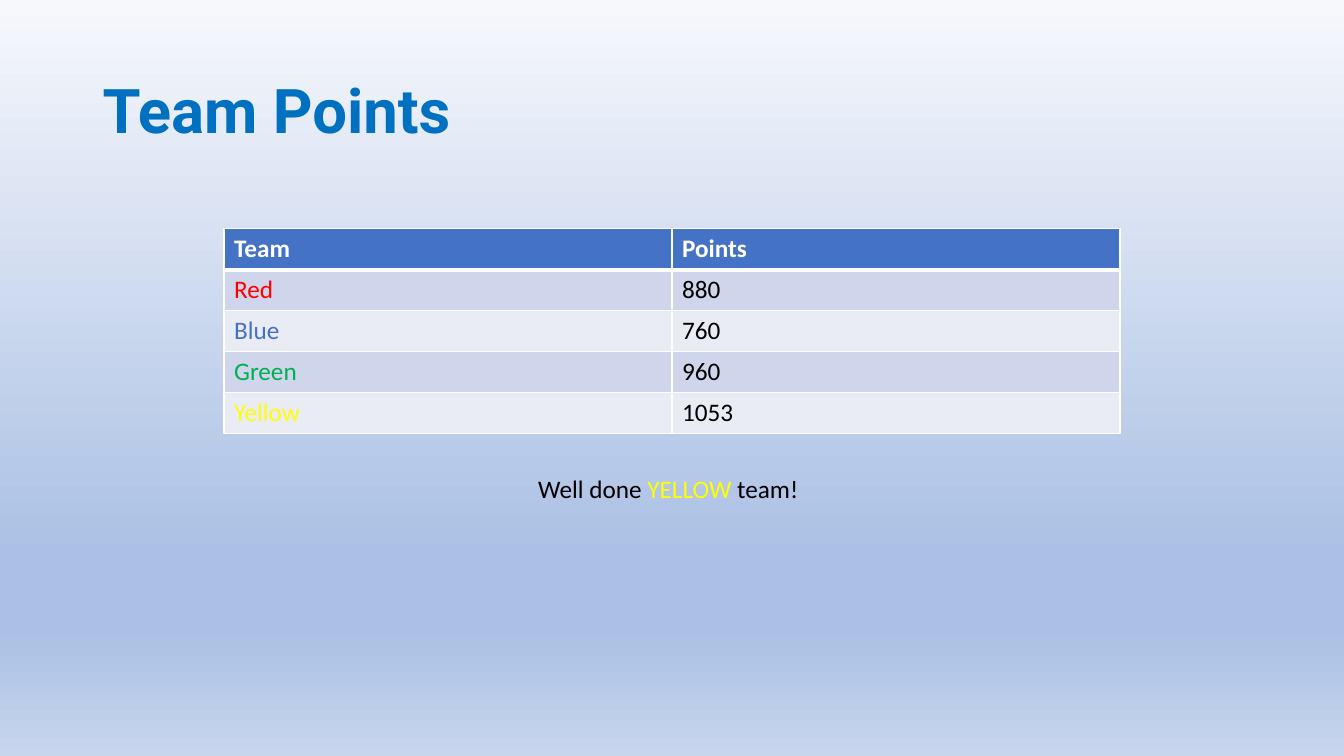
"""Builds the team points slide with its score table and closing note."""
from dataclasses import dataclass

from lxml.etree import SubElement
from pptx import Presentation
from pptx.dml.color import RGBColor as Rgb
from pptx.enum.text import MSO_ANCHOR as Anchor, MSO_AUTO_SIZE as AutoSize, PP_ALIGN as Align
from pptx.oxml.ns import qn
from pptx.util import Inches, Pt

COLOURS = {
    "title": "0070C0", "header": "4472C4", "odd": "CFD5EA", "even": "E9EBF5",
    "white": "FFFFFF", "black": "000000", "red": "FF0000", "blue": "4472C4",
    "green": "00B050", "yellow": "FFFF00",
    "sky_top": "F6F8FC", "sky_low": "ABC0E4", "sky_end": "C7D5ED",
}
SKY_STOPS = [(0, "sky_top"), (74, "sky_low"), (83, "sky_low"), (100, "sky_end")]
WIDTH, HEIGHT = Inches(13.33), Inches(7.5)
BODY_FORMAT = {"name": "Calibri", "size": Pt(18), "bold": False}
HEADER_FORMAT = BODY_FORMAT | {"bold": True}
TITLE_FORMAT = {"name": "Roboto", "size": Pt(44), "bold": True}


@dataclass(frozen=True)
class Area:
    """Position and size in percent of the slide."""
    left: float
    top: float
    width: float
    height: float

    def lengths(self) -> tuple[int, int, int, int]:
        return (round(WIDTH * self.left / 100), round(HEIGHT * self.top / 100),
                round(WIDTH * self.width / 100), round(HEIGHT * self.height / 100))


@dataclass(frozen=True)
class Score:
    team: str
    points: str
    colour: str


TITLE_AREA = Area(6.88, 5.32, 86.25, 19.33)
TABLE_AREA = Area(16.67, 30.27, 66.67, 27.07)
NOTE_AREA = Area(39.3, 62, 21.4, 5.33)
SCORES = [
    Score("Red", "880", "red"),
    Score("Blue", "760", "blue"),
    Score("Green", "960", "green"),
    Score("Yellow", "1053", "yellow"),
]
NOTE = [("Well done ", "black"), ("YELLOW", "yellow"), (" team!", "black")]


def apply(target, values: dict) -> None:
    for name, value in values.items():
        setattr(target, name, value)


def add_span(para, text: str, colour: str, font_format: dict) -> None:
    span = para.add_run()
    span.text = text
    apply(span.font, font_format)
    span.font.color.rgb = Rgb.from_string(COLOURS[colour])


def paint_sky(page) -> None:
    fill = page.background.fill
    fill.gradient()
    fill.gradient_angle = 270
    stops = page.element.find(".//" + qn("a:gsLst"))
    stops.clear()
    for share, colour in SKY_STOPS:
        stop = SubElement(stops, qn("a:gs"), pos=str(share * 1000))
        SubElement(stop, qn("a:srgbClr"), val=COLOURS[colour])


def add_borders(cell, top: int, bottom: int) -> None:
    properties = cell._tc.get_or_add_tcPr()
    for side, points in {"L": 1, "R": 1, "T": top, "B": bottom}.items():
        line = SubElement(properties, qn(f"a:ln{side}"), w=str(Pt(points)))
        paint = SubElement(line, qn("a:solidFill"))
        SubElement(paint, qn("a:srgbClr"), val=COLOURS["white"])


def fill_cell(cell, text: str, colour: str, row: int) -> None:
    add_borders(cell, top=3 if row == 1 else 1, bottom=3 if row == 0 else 1)
    band = "header" if row == 0 else ("odd" if row % 2 else "even")
    cell.fill.solid()
    cell.fill.fore_color.rgb = Rgb.from_string(COLOURS[band])
    add_span(cell.text_frame.paragraphs[0], text, colour,
             BODY_FORMAT if row else HEADER_FORMAT)


def add_title(page) -> None:
    title = page.shapes.title
    apply(title, dict(zip(("left", "top", "width", "height"), TITLE_AREA.lengths())))
    title.text_frame.vertical_anchor = Anchor.MIDDLE
    para = title.text_frame.paragraphs[0]
    apply(para, {"alignment": Align.LEFT, "line_spacing": 0.9})
    add_span(para, "Team Points", "title", TITLE_FORMAT)


def add_scores(page) -> None:
    table = page.shapes.add_table(len(SCORES) + 1, 2, *TABLE_AREA.lengths()).table
    lines = [(("Team", "white"), ("Points", "white"))]
    lines += [((score.team, score.colour), (score.points, "black")) for score in SCORES]
    for row, line in enumerate(lines):
        for column, (text, colour) in enumerate(line):
            fill_cell(table.cell(row, column), text, colour, row)


def add_note(page) -> None:
    frame = page.shapes.add_textbox(*NOTE_AREA.lengths()).text_frame
    apply(frame, {"word_wrap": True, "auto_size": AutoSize.SHAPE_TO_FIT_TEXT})
    for text, colour in NOTE:
        add_span(frame.paragraphs[0], text, colour, BODY_FORMAT)


def main() -> None:
    deck = Presentation()
    apply(deck, {"slide_width": WIDTH, "slide_height": HEIGHT})
    page = deck.slides.add_slide(deck.slide_layouts.get_by_name("Title Only"))
    paint_sky(page)
    add_title(page)
    add_scores(page)
    add_note(page)
    deck.save("out.pptx")


if __name__ == "__main__":
    main()
